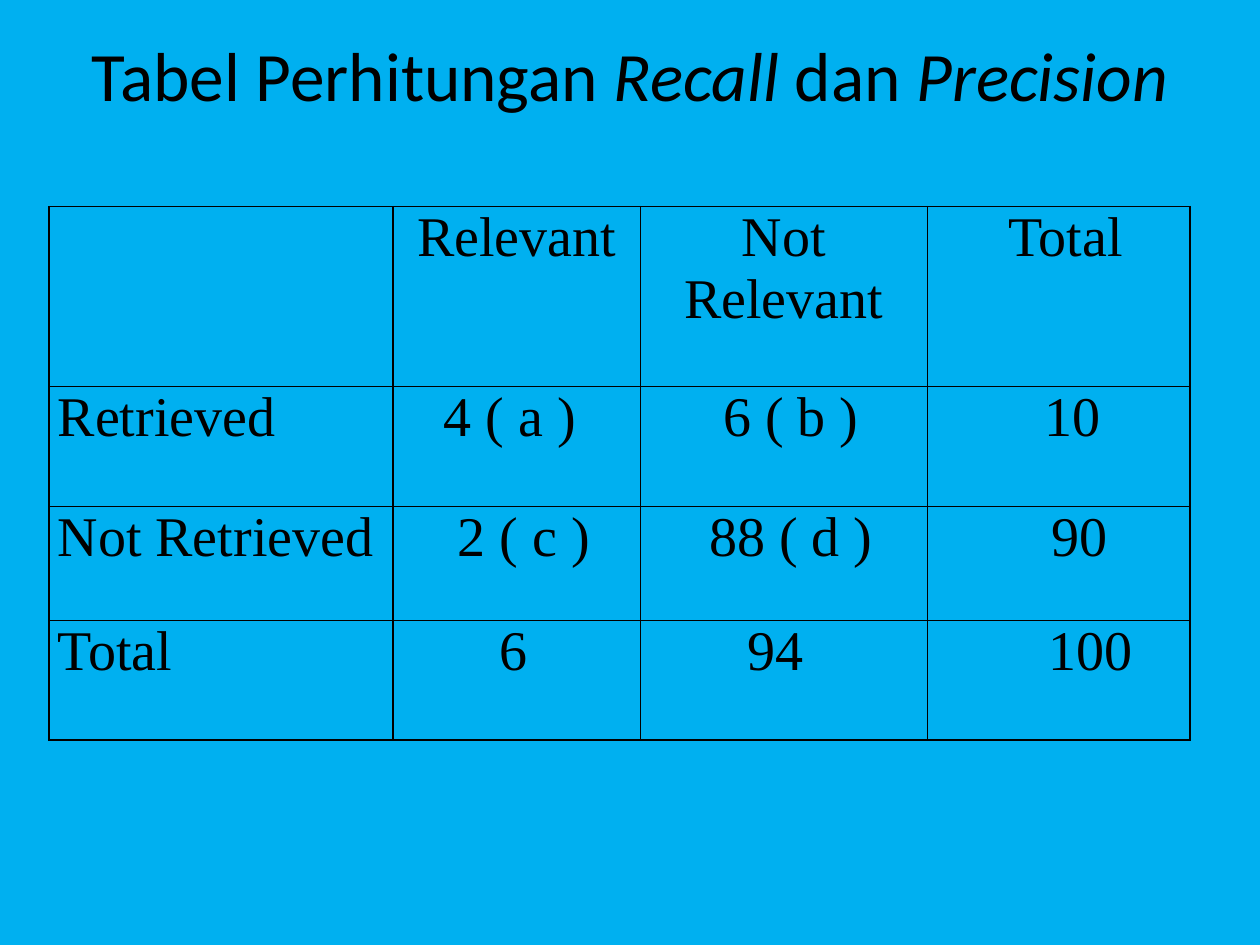
from lxml import etree
from pptx import Presentation
from pptx.dml.color import RGBColor
from pptx.enum import text as t
from pptx.oxml import ns
from pptx.util import Pt

SKY = RGBColor(0x00, 0xB0, 0xF0)
BLACK = RGBColor(0, 0, 0)
LEFT, MID = t.PP_ALIGN.LEFT, t.PP_ALIGN.CENTER
COLS = (196.5, 141.5, 164, 150)
ROWS = (103, 68.5, 65, 68.5)
CELLS = (
    (("", LEFT, 0), ("Relevant", MID, 0), ("Not Relevant", MID, 0), ("Total", MID, 8)),
    (("Retrieved", LEFT, 0), ("4 ( a )", MID, -8), ("6 ( b )", MID, 8), ("10", MID, 16)),
    (("Not Retrieved", LEFT, 0), ("2 ( c )", MID, 8), ("88 ( d )", MID, 8), ("90", MID, 24)),
    (("Total", LEFT, 0), ("6", LEFT, 56), ("94", LEFT, 56), ("100", LEFT, 64)),
)


def style(font, name, size):
    """Set the face, size and colour of a font."""
    font.name, font.size = name, Pt(size)
    font.color.rgb = BLACK


def add_title(slide, x, y, w, h):
    """Fill the title placeholder, with the terms in italics."""
    title = slide.shapes.title
    title.left, title.top, title.width, title.height = map(Pt, (x, y, w, h))
    frame = title.text_frame
    frame.auto_size = t.MSO_AUTO_SIZE.NONE
    frame.vertical_anchor = t.MSO_ANCHOR.MIDDLE
    frame.margin_bottom = Pt(52)
    para = frame.paragraphs[0]
    para.alignment = MID
    parts = ("Tabel Perhitungan", " Recall ", "dan ", "Precision")
    for i, part in enumerate(parts):
        run = para.add_run()
        run.text = part
        style(run.font, "Calibri", 39.6)
        run.font.italic = i % 2 == 1


def add_edges(cell):
    """Draw a thin black line on each side of a cell."""
    props = cell._tc.get_or_add_tcPr()
    for i, side in enumerate("LRTB"):
        line = etree.Element(ns.qn("a:ln" + side), w=str(Pt(1)))
        fill = etree.SubElement(line, ns.qn("a:solidFill"))
        etree.SubElement(fill, ns.qn("a:srgbClr"), val=str(BLACK))
        props.insert(i, line)


def fill_cell(cell, words, align, shift):
    """Write one cell, its text moved by an indent."""
    cell.fill.background()
    add_edges(cell)
    cell.margin_left = cell.margin_right = Pt(5)
    cell.margin_top = cell.margin_bottom = 0
    para = cell.text_frame.paragraphs[0]
    para.text = words
    para.alignment = align
    style(para.font, "Times New Roman", 32)
    for run in para.runs:
        style(run.font, "Times New Roman", 32)
    if shift:
        side = "marL" if shift > 0 else "marR"
        para._p.get_or_add_pPr().set(side, str(Pt(abs(shift))))


def add_grid(slide, x, y):
    """Add the recall and precision table at a point."""
    frame = slide.shapes.add_table(
        len(ROWS), len(COLS), Pt(x), Pt(y), Pt(sum(COLS)), Pt(sum(ROWS)))
    table = frame.table
    table.first_row = table.horz_banding = False
    for col, w in zip(table.columns, COLS):
        col.width = Pt(w)
    for row, h, line in zip(table.rows, ROWS, CELLS):
        row.height = Pt(h)
        for cell, data in zip(row.cells, line):
            fill_cell(cell, *data)


def main():
    """Build and save the slide."""
    deck = Presentation()
    deck.slide_width, deck.slide_height = Pt(720), Pt(540)
    slide = deck.slides.add_slide(deck.slide_layouts[5])
    back = slide.background.fill
    back.solid()
    back.fore_color.rgb = SKY
    add_title(slide, 36, 21.6, 648, 90)
    add_grid(slide, 28, 118)
    deck.save("out.pptx")


if __name__ == "__main__":
    main()
